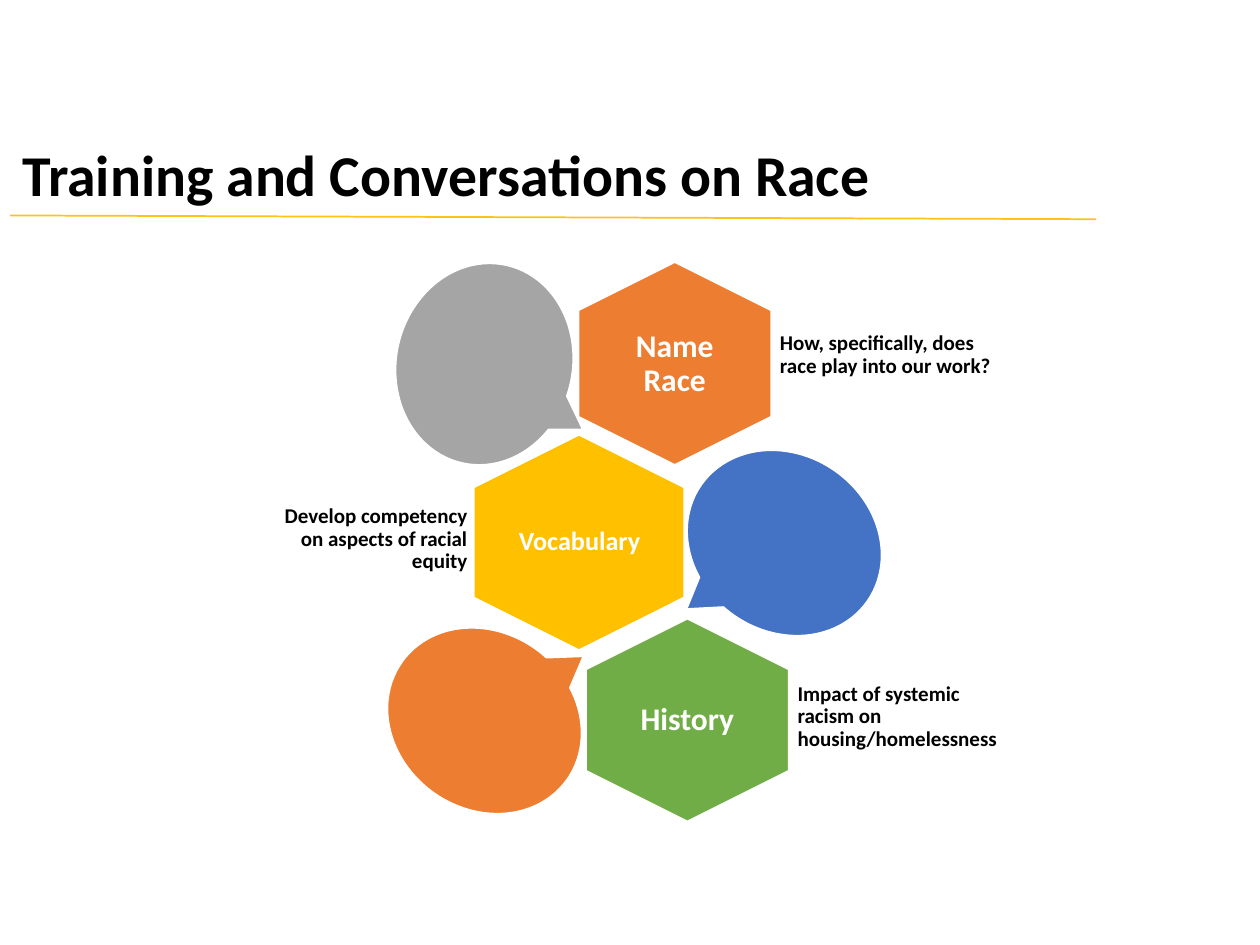
from typing import NamedTuple

from lxml.etree import SubElement
from pptx import Presentation
from pptx.dml.color import RGBColor
from pptx.enum.shapes import MSO_CONNECTOR, MSO_SHAPE
from pptx.enum.text import MSO_ANCHOR, MSO_AUTO_SIZE, PP_ALIGN
from pptx.oxml.ns import qn
from pptx.util import Inches, Pt

BLACK = RGBColor(0x00, 0x00, 0x00)
WHITE = RGBColor(0xFF, 0xFF, 0xFF)
ORANGE = RGBColor(0xED, 0x7D, 0x31)
GRAY = RGBColor(0xA5, 0xA5, 0xA5)
GOLD = RGBColor(0xFF, 0xC0, 0x00)
BLUE = RGBColor(0x44, 0x72, 0xC4)
GREEN = RGBColor(0x70, 0xAD, 0x47)
RULE_GOLD = RGBColor(0xFF, 0xC2, 0x16)

CALLOUT_SIZE = (1.61, 1.4)


class Box(NamedTuple):
    left: float
    top: float
    width: float
    height: float


class Label(NamedTuple):
    text: str
    box: Box
    size: int
    color: RGBColor
    align: PP_ALIGN
    inset: float


class Figure(NamedTuple):
    box: Box
    rotation: float
    fill: RGBColor


class Topic(NamedTuple):
    hexagon: Figure
    name: Label
    detail: Label
    callout: Figure


def name_label(text: str, box: Box, size: int, inset: float) -> Label:
    return Label(text, box, size, WHITE, PP_ALIGN.CENTER, inset)


def detail_label(text: str, box: Box, align: PP_ALIGN = PP_ALIGN.LEFT) -> Label:
    return Label(text, box, 12, BLACK, align, 0.05)


TOPICS = [
    Topic(
        Figure(Box(4.55, 2.12, 1.61, 1.53), 90, ORANGE),
        name_label("Name Race", Box(4.84, 2.35, 1.03, 1.08), 18, 0.07),
        detail_label("How, specifically, does race play into our work?",
                     Box(6.14, 2.34, 1.79, 0.96)),
        Figure(Box(3.04, 2.19, *CALLOUT_SIZE), 282.6, GRAY),
    ),
    Topic(
        Figure(Box(3.74, 3.47, 1.71, 1.67), 90, GOLD),
        name_label("Vocabulary", Box(4.04, 3.73, 1.12, 1.15), 15, 0.06),
        detail_label("Develop competency on aspects of racial equity",
                     Box(2.02, 3.8, 1.74, 0.96), PP_ALIGN.RIGHT),
        Figure(Box(5.42, 3.61, *CALLOUT_SIZE), 35, BLUE),
    ),
    Topic(
        Figure(Box(4.65, 4.91, 1.61, 1.61), 90, GREEN),
        name_label("History", Box(4.92, 5.18, 1.07, 1.07), 18, 0.07),
        detail_label("Impact of systemic racism on housing/homelessness",
                     Box(6.28, 5.21, 1.79, 0.96)),
        Figure(Box(3.04, 5.02, *CALLOUT_SIZE), 215.9, ORANGE),
    ),
]


def apply(target, values: dict) -> None:
    for name, value in values.items():
        setattr(target, name, value)


def in_inches(box: Box) -> list:
    return [Inches(value) for value in box]


def write(frame, text: str, size: int, color: RGBColor, align: PP_ALIGN) -> None:
    para = frame.paragraphs[0]
    apply(para, {"alignment": align, "line_spacing": 0.9})
    span = para.add_run()
    span.text = text
    apply(span.font, {"name": "Calibri", "size": Pt(size), "bold": True})
    span.font.color.rgb = color


def add_title(page, text: str, box: Box) -> None:
    title = page.shapes.title
    apply(title, dict(zip(("left", "top", "width", "height"), in_inches(box))))
    apply(title.text_frame, {
        "word_wrap": True,
        "auto_size": MSO_AUTO_SIZE.NONE,
        "vertical_anchor": MSO_ANCHOR.TOP,
    })
    write(title.text_frame, text, 33, BLACK, PP_ALIGN.LEFT)


def add_rule(page) -> None:
    rule = page.shapes.add_connector(
        MSO_CONNECTOR.STRAIGHT, Inches(0.08), Inches(1.71), Inches(8.7), Inches(1.74))
    rule.line.color.rgb = RULE_GOLD
    rule.line.width = Pt(1)
    SubElement(rule._element.spPr, qn("a:effectLst"))


def add_figure(page, kind: MSO_SHAPE, figure: Figure) -> None:
    shape = page.shapes.add_shape(kind, *in_inches(figure.box))
    shape.rotation = figure.rotation
    shape.shadow.inherit = False
    shape.fill.solid()
    shape.fill.fore_color.rgb = figure.fill
    shape.line.color.rgb = WHITE
    shape.line.width = Pt(1)


def add_label(page, label: Label) -> None:
    frame = page.shapes.add_textbox(*in_inches(label.box)).text_frame
    apply(frame, {"word_wrap": True, "vertical_anchor": MSO_ANCHOR.MIDDLE})
    sides = ("margin_left", "margin_top", "margin_right", "margin_bottom")
    apply(frame, dict.fromkeys(sides, Inches(label.inset)))
    write(frame, label.text, label.size, label.color, label.align)


def main() -> None:
    deck = Presentation()
    apply(deck, {"slide_width": Inches(10), "slide_height": Inches(7.5)})
    page = deck.slides.add_slide(deck.slide_layouts[5])
    for topic in TOPICS:
        add_figure(page, MSO_SHAPE.HEXAGON, topic.hexagon)
        add_label(page, topic.name)
        add_label(page, topic.detail)
        add_figure(page, MSO_SHAPE.OVAL_CALLOUT, topic.callout)
    add_title(page, "Training and Conversations on Race", Box(0.08, 1.11, 8.62, 1.09))
    add_rule(page)
    deck.save("out.pptx")


if __name__ == "__main__":
    main()
